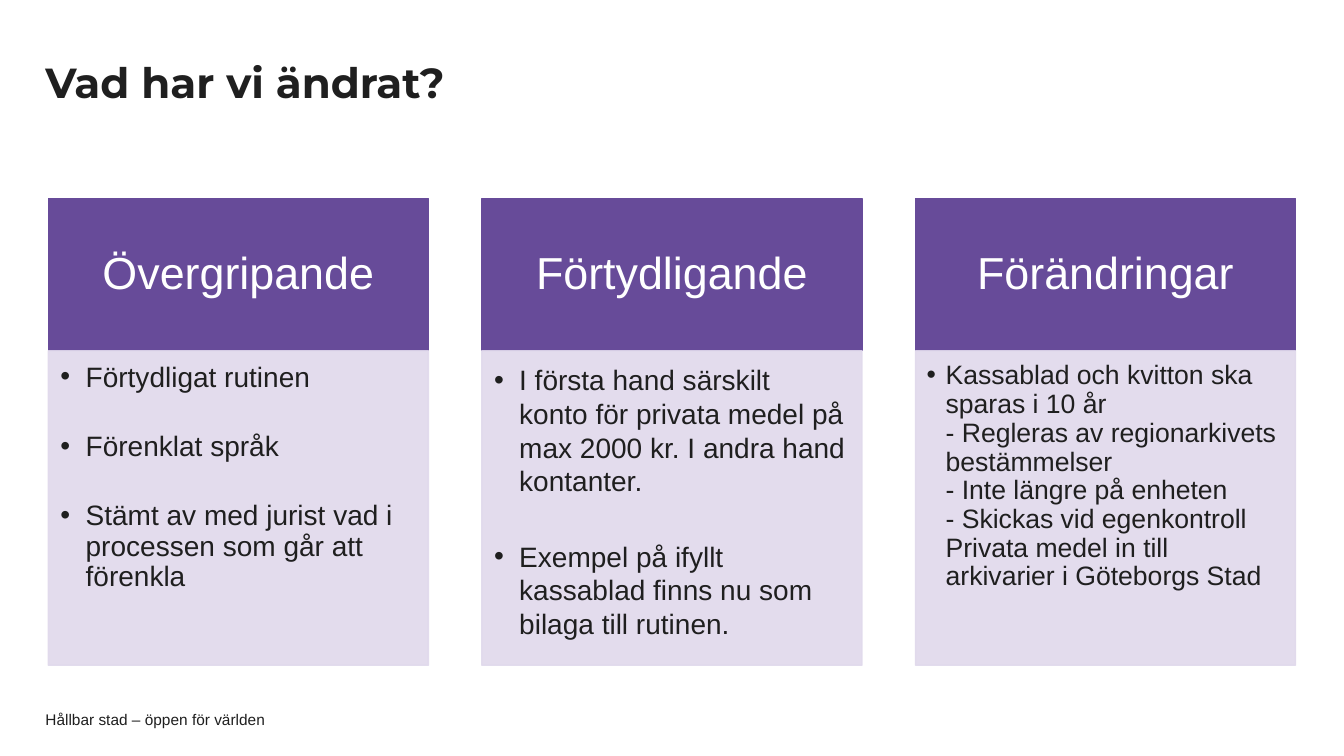
from dataclasses import dataclass

from lxml import etree
from pptx import Presentation
from pptx.dml.color import RGBColor
from pptx.enum.shapes import MSO_SHAPE
from pptx.enum.text import MSO_ANCHOR, PP_ALIGN
from pptx.oxml.ns import qn
from pptx.util import Inches, Pt


@dataclass(frozen=True)
class Theme:
    purple: str = "674B99"
    lilac: str = "E0D9EC"
    ink: str = "1F1F1F"
    white: str = "FFFFFF"
    heading_font: str = "Montserrat"
    body_font: str = "Arial"
    title_size: int = 30
    header_size: int = 32
    footer_size: int = 11


THEME = Theme()

COLUMNS = [
    dict(
        header="Övergripande",
        items=[
            "Förtydligat rutinen",
            "Förenklat språk",
            "Stämt av med jurist vad i processen som går att förenkla",
        ],
        size=20, indent=0.25, line_spacing=0.9, gap=28,
        margins=(0.12, 0.12, 0.16, 0.17),
    ),
    dict(
        header="Förtydligande",
        items=[
            "I första hand särskilt konto för privata medel på max 2000 kr. "
            "I andra hand kontanter.",
            "Exempel på ifyllt kassablad finns nu som bilaga till rutinen.",
        ],
        size=20, indent=0.25, line_spacing=1.0, gap=30,
        margins=(0.12, 0.12, 0.16, 0.17),
    ),
    dict(
        header="Förändringar",
        items=[
            "Kassablad och kvitton ska sparas i 10 år\v"
            "- Regleras av regionarkivets bestämmelser\v"
            "- Inte längre på enheten\v"
            "- Skickas vid egenkontroll Privata medel in till "
            "arkivarier i Göteborgs Stad",
        ],
        size=19, indent=0.19, line_spacing=0.9, gap=0,
        margins=(0.11, 0.11, 0.15, 0.17),
    ),
]


def add_bullet(paragraph, indent):
    properties = paragraph._p.get_or_add_pPr()
    properties.set("marL", str(Inches(indent)))
    properties.set("indent", str(-Inches(indent)))
    etree.SubElement(properties, qn("a:buFont")).set("typeface", THEME.body_font)
    etree.SubElement(properties, qn("a:buChar")).set("char", "•")


def write_text(shape, texts, *, size, color=THEME.ink, font=THEME.body_font,
               bold=False, align=PP_ALIGN.LEFT, anchor=MSO_ANCHOR.MIDDLE,
               margins=(0, 0, 0, 0), line_spacing=1.0, gap=0, indent=None):
    frame = shape.text_frame
    frame.word_wrap = True
    frame.vertical_anchor = anchor
    (frame.margin_left, frame.margin_top,
     frame.margin_right, frame.margin_bottom) = map(Inches, margins)
    for index, text in enumerate(texts):
        paragraph = frame.add_paragraph() if index else frame.paragraphs[0]
        paragraph.text = text
        paragraph.alignment = align
        paragraph.line_spacing = line_spacing
        paragraph.space_before = Pt(gap if index else 0)
        if indent is not None:
            add_bullet(paragraph, indent)
        for run in paragraph.runs:
            run.font.name = font
            run.font.size = Pt(size)
            run.font.bold = bold
            run.font.color.rgb = RGBColor.from_string(color)


def add_panel(slide, left, top, width, height, color, opacity=100):
    shape = slide.shapes.add_shape(
        MSO_SHAPE.RECTANGLE, *map(Inches, (left, top, width, height)))
    shape.shadow.inherit = False
    shape.fill.solid()
    shape.line.width = Pt(1)
    for fill in (shape.fill, shape.line.fill):
        fill.solid()
        fill.fore_color.rgb = RGBColor.from_string(color)
    if opacity < 100:
        for color_element in shape._element.spPr.iter(qn("a:srgbClr")):
            alpha = etree.SubElement(color_element, qn("a:alpha"))
            alpha.set("val", str(opacity * 1000))
    return shape


def add_label(slide, text, left, top, width, height, **text_format):
    box = slide.shapes.add_textbox(*map(Inches, (left, top, width, height)))
    write_text(box, [text], **text_format)


def add_column(slide, left, top, width, height, header, items, **body_format):
    header_height = 1.51
    header_panel = add_panel(slide, left, top, width, header_height, THEME.purple)
    write_text(header_panel, [header], size=THEME.header_size, color=THEME.white,
               align=PP_ALIGN.CENTER, margins=(0.25, 0.14, 0.25, 0.14),
               line_spacing=0.9)
    body_panel = add_panel(slide, left, top + header_height, width,
                           height - header_height, THEME.lilac, opacity=90)
    write_text(body_panel, items, anchor=MSO_ANCHOR.TOP, **body_format)


def add_columns(slide, left, top, width, height, columns):
    gap = 0.53
    column_width = (width - gap * (len(columns) - 1)) / len(columns)
    for index, column in enumerate(columns):
        add_column(slide, left + index * (column_width + gap), top,
                   column_width, height, **column)


def main():
    presentation = Presentation()
    presentation.slide_width = Inches(13.33)
    presentation.slide_height = Inches(7.5)
    slide = presentation.slides.add_slide(presentation.slide_layouts[6])
    add_label(slide, "Hållbar stad – öppen för världen", 0.45, 7.06, 9.45, 0.16,
              size=THEME.footer_size)
    add_label(slide, "Vad har vi ändrat?", 0.45, 0.44, 10.03, 0.81,
              size=THEME.title_size, font=THEME.heading_font, bold=True,
              margins=(0, 0.05, 0, 0.05), line_spacing=0.9)
    add_columns(slide, 0.48, 1.97, 12.37, 4.63, COLUMNS)
    presentation.save("out.pptx")


if __name__ == "__main__":
    main()
